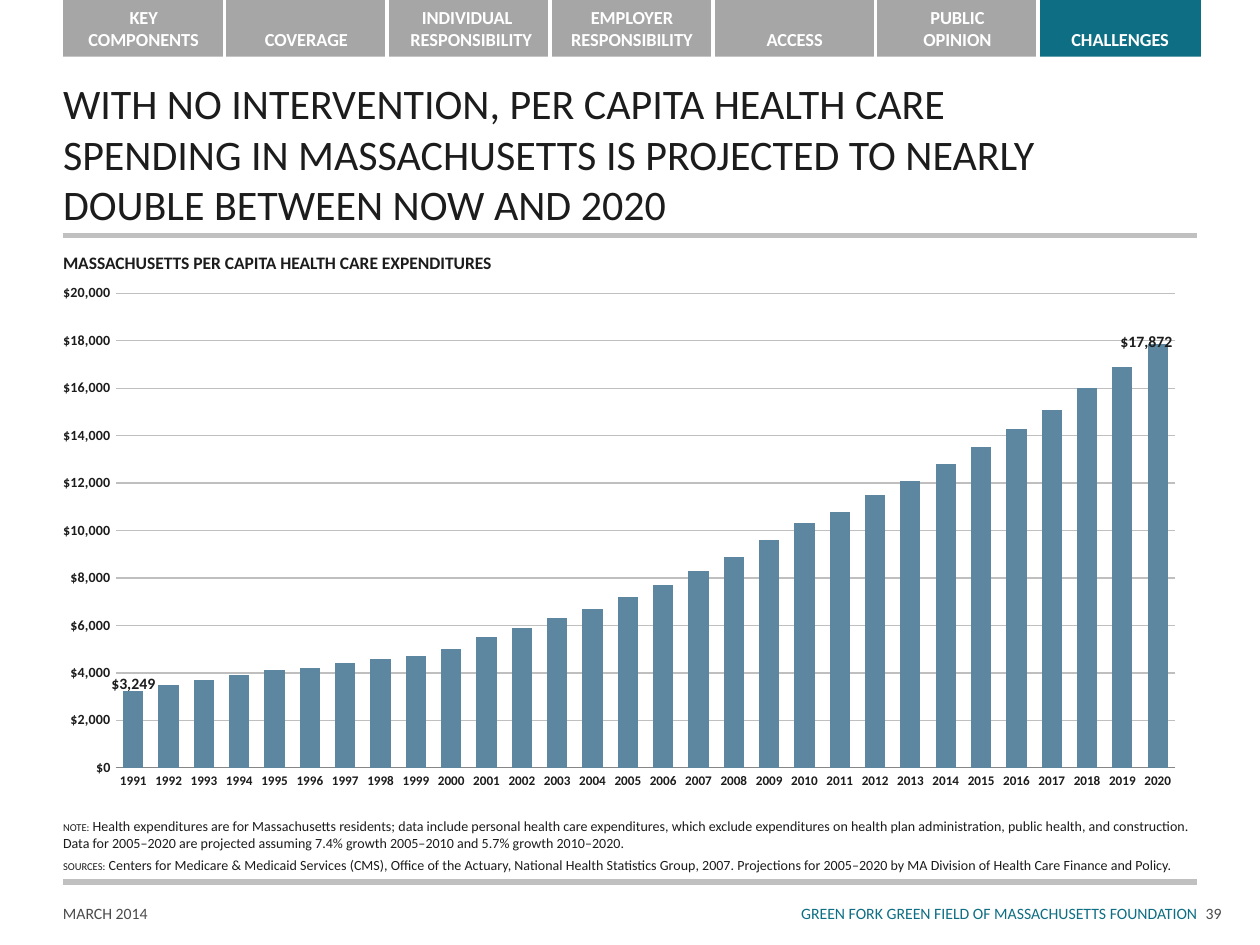
from collections import namedtuple

from lxml import etree
from pptx import Presentation
from pptx.chart.data import CategoryChartData
from pptx.dml.color import RGBColor
from pptx.enum.chart import XL_CHART_TYPE, XL_LABEL_POSITION, XL_TICK_MARK
from pptx.enum.shapes import MSO_CONNECTOR, MSO_SHAPE
from pptx.enum.text import MSO_ANCHOR, MSO_AUTO_SIZE, PP_ALIGN
from pptx.oxml import parse_xml
from pptx.oxml.ns import nsdecls, qn
from pptx.util import Pt

Box = namedtuple("Box", "x y w h")

FONT = "Calibri"
INK = RGBColor(0x1C, 0x1C, 0x1C)
BLACK = RGBColor(0, 0, 0)
WHITE = RGBColor(0xFF, 0xFF, 0xFF)
TEAL = RGBColor(0x0E, 0x6E, 0x83)
TAB_GRAY = RGBColor(0xA6, 0xA6, 0xA6)
RULE_GRAY = RGBColor(0xC0, 0xC0, 0xC0)
GRID_GRAY = RGBColor(0xBF, 0xBF, 0xBF)
AXIS_GRAY = RGBColor(0x86, 0x86, 0x86)
FOOTER_GRAY = RGBColor(0x4B, 0x4B, 0x4B)
BAR_BLUE = RGBColor(0x5D, 0x87, 0xA1)

DOLLARS = '"$"#,##0'
TABS = ["KEY\vCOMPONENTS", "COVERAGE", "INDIVIDUAL \v RESPONSIBILITY",
        "EMPLOYER RESPONSIBILITY", "ACCESS", "PUBLIC\vOPINION", "CHALLENGES"]
FIRST_YEAR, LAST_YEAR = 1991, 2020
FIRST_VALUE, LAST_VALUE = 3249, 17872
MIDDLE_VALUES = [3500, 3700, 3900, 4100, 4200, 4400, 4600, 4700, 5000, 5500,
                 5900, 6300, 6700, 7200, 7700, 8300, 8900, 9600, 10300, 10800,
                 11500, 12100, 12800, 13500, 14300, 15100, 16000, 16900]
NOTES = [
    (2, [("NOTE:", 6, INK),
         (" Health expenditures are for Massachusetts residents; data include personal "
          "health care expenditures, which exclude expenditures on health plan "
          "administration, public health, and construction. \vData for 2005–2020 are "
          "projected assuming 7.4% growth 2005–2010 and 5.7% growth 2010–2020.", 8, INK)]),
    (3, [("SOURCES", 6, INK), (":", 6, BLACK),
         (" Centers for Medicare & Medicaid Services (CMS), Office of the Actuary, "
          "National Health Statistics Group, 2007. Projections for 2005–2020 by MA "
          "Division of Health Care Finance and Policy.", 8, INK)]),
]


def set_font(font, size, color, bold=False):
    font.name, font.size, font.bold = FONT, Pt(size), bold
    font.color.rgb = color


def set_frame(tf, side=0, edge=0, anchor=MSO_ANCHOR.TOP, wrap=True):
    tf.margin_left = tf.margin_right = Pt(side)
    tf.margin_top = tf.margin_bottom = Pt(edge)
    tf.vertical_anchor = anchor
    tf.word_wrap = wrap
    tf.auto_size = MSO_AUTO_SIZE.NONE


def set_text(tf, text, size, color, bold=False, align=PP_ALIGN.LEFT):
    tf.text = text
    p = tf.paragraphs[0]
    p.alignment = align
    for r in p.runs:
        set_font(r.font, size, color, bold)


def add_textbox(s, box):
    return s.shapes.add_textbox(*map(Pt, box)).text_frame


def add_line(s, x1, y1, x2, y2, color, width):
    line = s.shapes.add_connector(MSO_CONNECTOR.STRAIGHT, Pt(x1), Pt(y1), Pt(x2), Pt(y2))
    line.line.color.rgb = color
    line.line.width = Pt(width)
    etree.SubElement(line._element.spPr, qn("a:effectLst"))


def add_tabs(s, box, active):
    pitch = box.w / len(TABS)
    for i, label in enumerate(TABS):
        x = box.x + i * pitch
        tab = s.shapes.add_shape(MSO_SHAPE.RECTANGLE, Pt(x), Pt(box.y),
                                 Pt(pitch - 0.8), Pt(box.h))
        tab.shadow.inherit = False
        tab.fill.solid()
        tab.fill.fore_color.rgb = TEAL if label == active else TAB_GRAY
        tab.line.fill.background()
        set_frame(tab.text_frame, 3.6, 3.6, MSO_ANCHOR.BOTTOM)
        set_text(tab.text_frame, label, 10.5, WHITE, True, PP_ALIGN.CENTER)
    for i in range(1, len(TABS)):
        x = box.x + i * pitch - 0.7
        add_line(s, x, box.y, x, box.y + box.h, WHITE, 2)


def add_title(s, box, text):
    title = s.shapes.title
    title.left, title.top, title.width, title.height = map(Pt, box)
    set_frame(title.text_frame, 0, 3.6, MSO_ANCHOR.BOTTOM)
    set_text(title.text_frame, text, 24, INK)
    bottom = box.y + box.h
    add_line(s, box.x, bottom, box.x + box.w, bottom, RULE_GRAY, 3)


def offset_label(point, dx, dy):
    """Move a point's value label by fractions of the chart's size."""
    label = point.data_label
    set_font(label.font, 9, INK, True)
    label.position = XL_LABEL_POSITION.INSIDE_END
    idx = label._dLbl.find(qn("c:idx"))
    idx.addnext(parse_xml(f'<c:layout {nsdecls("c")}><c:manualLayout>'
                          f'<c:x val="{dx}"/><c:y val="{dy}"/>'
                          '</c:manualLayout></c:layout>'))


def set_plot_area(chart, x, y, w, h):
    plot_area = chart._chartSpace.chart.plotArea
    for old in plot_area.findall(qn("c:layout")):
        plot_area.remove(old)
    plot_area.insert(0, parse_xml(
        f'<c:layout {nsdecls("c")}><c:manualLayout><c:layoutTarget val="inner"/>'
        '<c:xMode val="edge"/><c:yMode val="edge"/>'
        f'<c:x val="{x}"/><c:y val="{y}"/><c:w val="{w}"/><c:h val="{h}"/>'
        '</c:manualLayout></c:layout>'))


def add_spending_chart(s, box):
    gap = [None] * len(MIDDLE_VALUES)
    data = CategoryChartData(number_format=DOLLARS)
    data.categories = [str(year) for year in range(FIRST_YEAR, LAST_YEAR + 1)]
    data.add_series("Series 1", [FIRST_VALUE, *gap, LAST_VALUE])
    data.add_series("Series 2", [None, *MIDDLE_VALUES, None])
    chart = s.shapes.add_chart(XL_CHART_TYPE.COLUMN_STACKED, *map(Pt, box), data).chart
    chart.has_legend = chart.has_title = False
    set_font(chart.font, 18, INK)
    set_plot_area(chart, 0.046, 0.017, 0.935, 0.937)

    plot = chart.plots[0]
    plot.vary_by_categories = False
    plot.gap_width, plot.overlap = 75, 100
    for series in plot.series:
        series.format.fill.solid()
        series.format.fill.fore_color.rgb = BAR_BLUE

    ends = plot.series[0]
    labels = ends.data_labels
    labels.show_value = True
    labels.number_format, labels.number_format_is_linked = DOLLARS, False
    labels.position = XL_LABEL_POSITION.INSIDE_END
    set_font(labels.font, 9, INK, True)
    offset_label(ends.points[0], 0, -0.04)
    offset_label(ends.points[LAST_YEAR - FIRST_YEAR], -0.01, -0.03)

    years, values = chart.category_axis, chart.value_axis
    for axis, size in ((years, 7.5), (values, 8)):
        axis.major_tick_mark = axis.minor_tick_mark = XL_TICK_MARK.NONE
        set_font(axis.tick_labels.font, size, INK, True)
    years.format.line.color.rgb = AXIS_GRAY
    values.format.line.fill.background()
    values.minimum_scale, values.maximum_scale, values.major_unit = 0, 20000, 2000
    values.tick_labels.number_format = DOLLARS
    values.tick_labels.number_format_is_linked = False
    values.major_gridlines.format.line.color.rgb = GRID_GRAY
    values.major_gridlines.format.line.width = Pt(0.75)


def add_heading(s, box, text):
    tf = add_textbox(s, box)
    set_frame(tf, 0, 3.6, wrap=False)
    set_text(tf, text, 10, INK, True)


def add_notes(s, box):
    tf = add_textbox(s, box)
    set_frame(tf, 0, 3.6, MSO_ANCHOR.BOTTOM)
    for i, (space, runs) in enumerate(NOTES):
        p = tf.add_paragraph() if i else tf.paragraphs[0]
        p.space_before = Pt(space)
        for text, size, color in runs:
            before, *after = text.split("\v")
            for j, part in enumerate([before, *after]):
                if j:
                    p.add_line_break()
                r = p.add_run()
                r.text = part
                set_font(r.font, size, color)


def add_footer(s, box):
    add_line(s, box.x, box.y, box.x + box.w, box.y, RULE_GRAY, 3)
    right = box.x + box.w
    parts = [
        (box.x, 72, "MARCH 2014", FOOTER_GRAY, PP_ALIGN.LEFT),
        (right - 310, 310, "GREEN FORK GREEN FIELD OF MASSACHUSETTS FOUNDATION",
         TEAL, PP_ALIGN.RIGHT),
        (right + 5, 31, "39", FOOTER_GRAY, PP_ALIGN.LEFT),
    ]
    for x, w, text, color, align in parts:
        tf = add_textbox(s, Box(x, box.y + 12.2, w, box.h - 12.2))
        set_frame(tf)
        set_text(tf, text, 9, color, align=align)


def main():
    prs = Presentation()
    prs.slide_width, prs.slide_height = Pt(720), Pt(540)
    s = prs.slides.add_slide(prs.slide_layouts[5])
    add_tabs(s, Box(36, 0, 651, 32.4), "CHALLENGES")
    add_title(s, Box(36, 72, 648, 62.6),
              "WITH NO INTERVENTION, PER CAPITA HEALTH CARE \v"
              "SPENDING IN MASSACHUSETTS IS PROJECTED TO NEARLY \v"
              "DOUBLE BETWEEN NOW AND 2020")
    add_heading(s, Box(36, 140.4, 250, 19.4),
                "MASSACHUSETTS PER CAPITA HEALTH CARE EXPENDITURES")
    add_spending_chart(s, Box(36, 162.7, 648, 289.4))
    add_notes(s, Box(36, 463, 647.3, 39.6))
    add_footer(s, Box(36, 504, 648, 35.2))
    prs.save("out.pptx")


if __name__ == "__main__":
    main()
